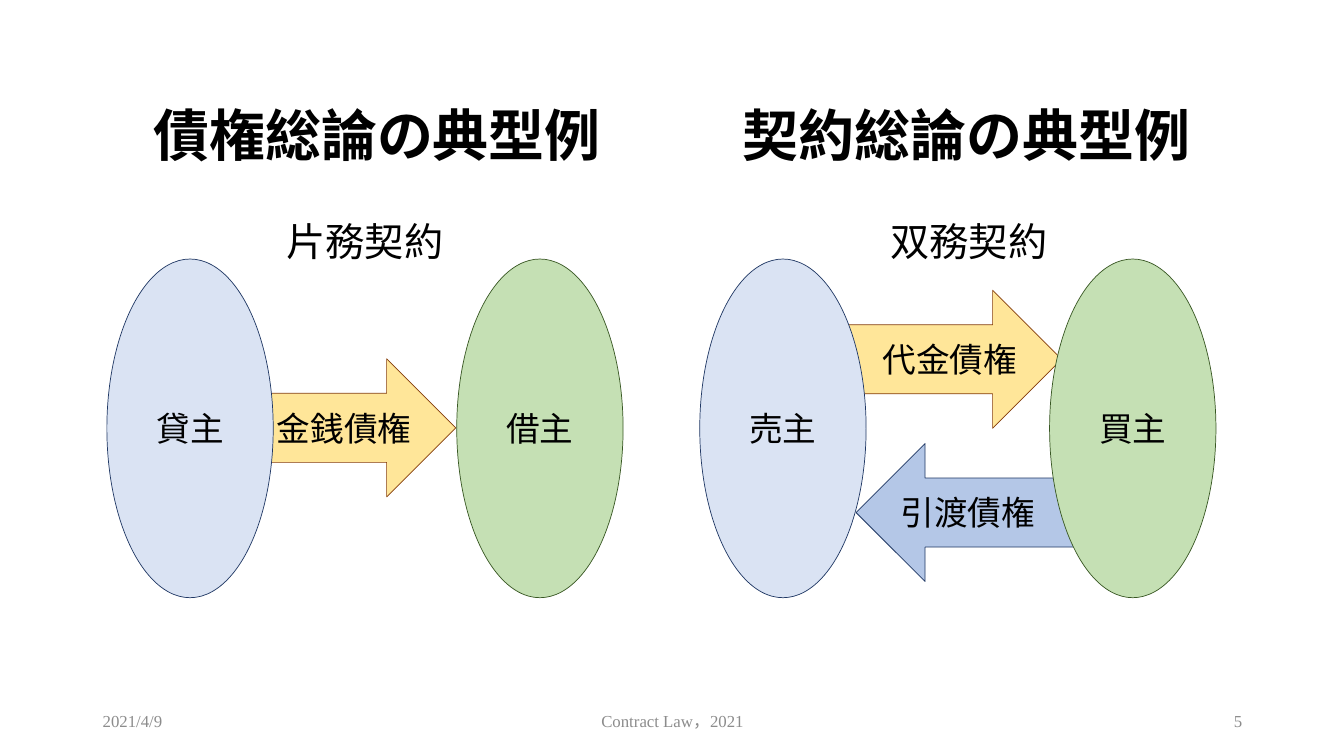
from pptx import Presentation
from pptx.dml.color import RGBColor
from pptx.enum.shapes import MSO_SHAPE
from pptx.enum.text import MSO_ANCHOR, PP_ALIGN
from pptx.util import Inches, Pt

LEFT, CENTER, RIGHT = PP_ALIGN.LEFT, PP_ALIGN.CENTER, PP_ALIGN.RIGHT
TOP, MIDDLE = MSO_ANCHOR.TOP, MSO_ANCHOR.MIDDLE
OVAL = MSO_SHAPE.OVAL
RIGHT_ARROW, LEFT_ARROW = MSO_SHAPE.RIGHT_ARROW, MSO_SHAPE.LEFT_ARROW

FONT = "Times New Roman"
BLACK = RGBColor(0x00, 0x00, 0x00)
GRAY = RGBColor(0x8C, 0x8C, 0x8C)
PALE_BLUE = RGBColor(0xDA, 0xE3, 0xF3)
BLUE = RGBColor(0xB4, 0xC7, 0xE7)
NAVY = RGBColor(0x20, 0x38, 0x64)
GREEN = RGBColor(0xC5, 0xE0, 0xB4)
DARK_GREEN = RGBColor(0x38, 0x57, 0x23)
YELLOW = RGBColor(0xFF, 0xE6, 0x99)
BROWN = RGBColor(0x84, 0x3C, 0x0B)

# Grid in inches
MARGIN = 0.92
PARTY_WIDTH, PARTY_HEIGHT, PARTY_TOP = 1.65, 3.36, 2.57
PARTY_STEP = 3.47
PANEL_LEFTS = (1.06, 6.94)
ARROW_HEIGHT = 1.37
CAPTION_WIDTH = 1.94
FOOTER_TOP, FOOTER_HEIGHT = 6.95, 0.4

presentation = Presentation()
presentation.slide_width, presentation.slide_height = Inches(13.33), Inches(7.5)
slide = presentation.slides.add_slide(presentation.slide_layouts[6])


def write(shape, text, size, align, anchor=MIDDLE, color=BLACK, bold=False):
    frame = shape.text_frame
    frame.word_wrap = True
    frame.vertical_anchor = anchor
    paragraph = frame.paragraphs[0]
    paragraph.text = text
    paragraph.alignment = align
    font = paragraph.font
    font.name, font.size, font.bold = FONT, Pt(size), bold
    font.color.rgb = color
    return paragraph


def add_figure(kind, box, text, align, fill, line):
    shape = slide.shapes.add_shape(kind, *map(Inches, box))
    shape.shadow.inherit = False
    shape.fill.solid()
    shape.fill.fore_color.rgb = fill
    shape.line.color.rgb = line
    shape.line.width = Pt(0.5)
    write(shape, text, 24, align)


# Claim arrows, behind the parties
for kind, left, top, width, text, align, fill, line in (
    (LEFT_ARROW, 8.49, 4.4, 2.25, "引渡債権", LEFT, BLUE, NAVY),
    (RIGHT_ARROW, 2.58, 3.56, 1.94, "金銭債権", RIGHT, YELLOW, BROWN),
    (RIGHT_ARROW, 8.39, 2.88, 2.14, "代金債権", RIGHT, YELLOW, BROWN),
):
    add_figure(kind, (left, top, width, ARROW_HEIGHT), text, align, fill, line)

# Headings
for left, width, text in (
    (MARGIN, 5.64, "債権総論の典型例"),
    (6.75, 5.67, "契約総論の典型例"),
):
    heading = slide.shapes.add_textbox(
        Inches(left), Inches(0.92), Inches(width), Inches(0.9))
    paragraph = write(heading, text, 40, CENTER, bold=True)
    paragraph.line_spacing = 0.9
    paragraph.space_before = Pt(10)

# Contract parties
for panel_left, parties in zip(PANEL_LEFTS, (("貸主", "借主"), ("売主", "買主"))):
    for column, (party, fill, line) in enumerate(
            zip(parties, (PALE_BLUE, GREEN), (NAVY, DARK_GREEN))):
        box = (panel_left + column * PARTY_STEP, PARTY_TOP,
               PARTY_WIDTH, PARTY_HEIGHT)
        add_figure(OVAL, box, party, CENTER, fill, line)

# Contract types
for left, text in ((2.65, "片務契約"), (8.64, "双務契約")):
    caption = slide.shapes.add_textbox(
        Inches(left), Inches(2.11), Inches(CAPTION_WIDTH), Inches(0.57))
    write(caption, text, 28, CENTER, TOP)

# Footer: date, course, page number
for left, width, text, align in (
    (MARGIN, 3, "2021/4/9", LEFT),
    (4.42, 4.5, "Contract Law，2021", CENTER),
    (9.42, 3, "5", RIGHT),
):
    footer = slide.shapes.add_textbox(
        Inches(left), Inches(FOOTER_TOP), Inches(width), Inches(FOOTER_HEIGHT))
    write(footer, text, 12, align, color=GRAY)

presentation.save("out.pptx")
